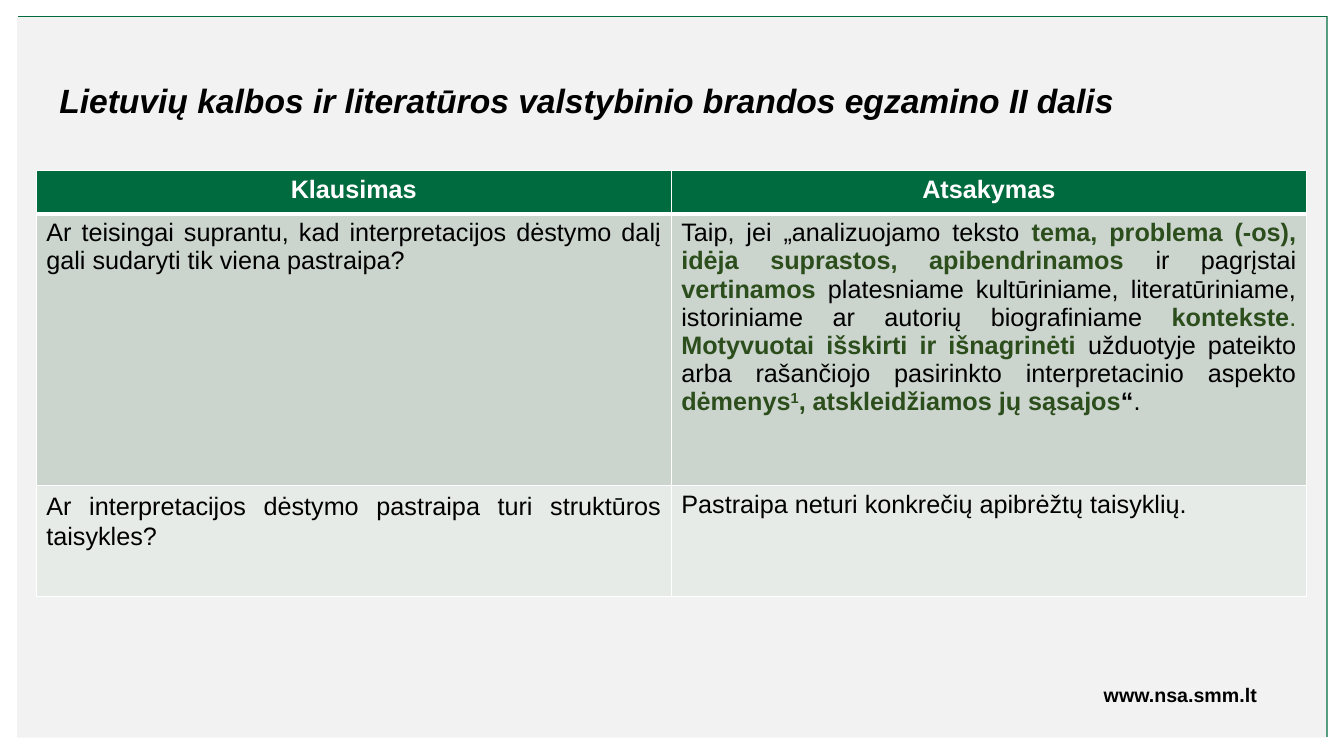
from dataclasses import dataclass

from lxml.etree import SubElement
from pptx import Presentation
from pptx.dml.color import RGBColor
from pptx.enum.shapes import MSO_SHAPE
from pptx.enum.text import MSO_ANCHOR, PP_ALIGN as Align
from pptx.oxml.ns import qn
from pptx.util import Pt

COLORS = {
    "green": "006B3E", "panel": "F2F2F2", "white": "FFFFFF", "black": "000000",
    "emphasis": "2C4E1C", "band_dark": "CCD4CE", "band_light": "E7EBE8",
}
FONT = "Arial"


@dataclass(frozen=True)
class Span:
    text: str
    color: str = "black"
    bold: bool = False
    raised: bool = False


@dataclass(frozen=True)
class Entry:
    spans: tuple[Span, ...]
    fill: str
    align: Align = Align.JUSTIFY
    line_spacing: float | None = None
    space_after: float | None = None
    bottom_border: float = 1


@dataclass(frozen=True)
class Panel:
    left: float
    top: float
    color: str


@dataclass(frozen=True)
class Label:
    text: str
    left: float
    top: float
    width: float
    height: float
    size: float
    align: Align = Align.LEFT
    italic: bool = False


def rgb(name: str) -> RGBColor:
    return RGBColor.from_string(COLORS[name])


def strong(text: str, raised: bool = False) -> Span:
    return Span(text, "emphasis", True, raised)


def heading(text: str) -> Entry:
    return Entry((Span(text, "white", True),), "green", Align.CENTER, bottom_border=3)


def draw_panel(shapes, panel: Panel) -> None:
    rectangle = shapes.add_shape(MSO_SHAPE.RECTANGLE, Pt(panel.left), Pt(panel.top),
                                 Pt(935.3), Pt(514.8))
    rectangle.shadow.inherit = False
    rectangle.fill.solid()
    rectangle.fill.fore_color.rgb = rgb(panel.color)
    rectangle.line.fill.background()


def draw_label(shapes, label: Label) -> None:
    frame = shapes.add_textbox(Pt(label.left), Pt(label.top),
                               Pt(label.width), Pt(label.height)).text_frame
    frame.word_wrap = True
    paragraph = frame.paragraphs[0]
    paragraph.text = label.text
    paragraph.alignment = label.align
    font = paragraph.font
    font.name, font.size = FONT, Pt(label.size)
    font.bold, font.italic = True, label.italic
    font.color.rgb = rgb("black")


def draw_border(cell, side: str, width: float) -> None:
    line = SubElement(cell._tc.get_or_add_tcPr(), qn(f"a:{side}"), w=str(int(Pt(width))))
    SubElement(SubElement(line, qn("a:solidFill")), qn("a:srgbClr"), val=COLORS["white"])


def fill_cell(cell, entry: Entry) -> None:
    for side in ("lnL", "lnR", "lnT"):
        draw_border(cell, side, 1)
    draw_border(cell, "lnB", entry.bottom_border)
    cell.fill.solid()
    cell.fill.fore_color.rgb = rgb(entry.fill)
    cell.vertical_anchor = MSO_ANCHOR.TOP

    paragraph = cell.text_frame.paragraphs[0]
    paragraph.alignment = entry.align
    if entry.line_spacing is not None:
        paragraph.line_spacing = entry.line_spacing
    if entry.space_after is not None:
        paragraph.space_after = Pt(entry.space_after)
    paragraph.font.name, paragraph.font.size = FONT, Pt(18)
    for span in entry.spans:
        run = paragraph.add_run()
        run.text = span.text
        run.font.bold = span.bold
        run.font.color.rgb = rgb(span.color)
        if span.raised:
            run._r.get_or_add_rPr().set("baseline", "30000")


def draw_table(shapes, rows: tuple[tuple[Entry, ...], ...],
               heights: tuple[float, ...]) -> None:
    column_width = 453.6
    table = shapes.add_table(len(rows), len(rows[0]), Pt(25.9), Pt(121.7),
                             Pt(column_width * len(rows[0])), Pt(sum(heights))).table
    for column in table.columns:
        column.width = Pt(column_width)
    for row, height, entries in zip(table.rows, heights, rows):
        row.height = Pt(height)
        for cell, entry in zip(row.cells, entries):
            fill_cell(cell, entry)


# Content
PANELS = (Panel(13, 11.5, "green"), Panel(12.2, 12.2, "panel"))
LABELS = (
    Label("www.nsa.smm.lt", 674.6, 484.6, 230.4, 24.5, 14, Align.RIGHT),
    Label("Lietuvių kalbos ir literatūros valstybinio brandos egzamino II dalis",
          35.3, 53.3, 799.2, 36, 24, italic=True),
)
PARAGRAPH_COUNT = Entry((Span(
    "Ar teisingai suprantu, kad interpretacijos dėstymo dalį gali sudaryti "
    "tik viena pastraipa?"),), "band_dark")
PARAGRAPH_COUNT_ANSWER = Entry((
    Span("Taip, jei „analizuojamo teksto "),
    strong("tema, problema (-os), idėja suprastos, apibendrinamos"),
    Span(" ir pagrįstai "),
    strong("vertinamos"),
    Span(" platesniame kultūriniame, literatūriniame, istoriniame ar autorių "
         "biografiniame "),
    strong("kontekste"),
    Span(". ", "emphasis"),
    strong("Motyvuotai išskirti ir išnagrinėti "),
    Span("užduotyje pateikto arba rašančiojo pasirinkto interpretacinio aspekto "),
    strong("dėmenys"),
    strong("1", raised=True),
    strong(", atskleidžiamos jų sąsajos"),
    Span("“", bold=True),
    Span("."),
), "band_dark")
STRUCTURE = Entry(
    (Span("Ar interpretacijos dėstymo pastraipa turi struktūros taisykles?"),),
    "band_light", line_spacing=1.07, space_after=8)
STRUCTURE_ANSWER = Entry(
    (Span("Pastraipa neturi konkrečių apibrėžtų taisyklių."),), "band_light", Align.LEFT)
ROWS = (
    (heading("Klausimas"), heading("Atsakymas")),
    (PARAGRAPH_COUNT, PARAGRAPH_COUNT_ANSWER),
    (STRUCTURE, STRUCTURE_ANSWER),
)


def main() -> None:
    deck = Presentation()
    deck.slide_width, deck.slide_height = Pt(960), Pt(540)
    shapes = deck.slides.add_slide(deck.slide_layouts[6]).shapes

    # Framed background
    for panel in PANELS:
        draw_panel(shapes, panel)
    # Footer address and title
    for label in LABELS:
        draw_label(shapes, label)
    # Questions and answers
    draw_table(shapes, ROWS, (31, 194.4, 79.2))

    deck.save("out.pptx")


if __name__ == "__main__":
    main()
